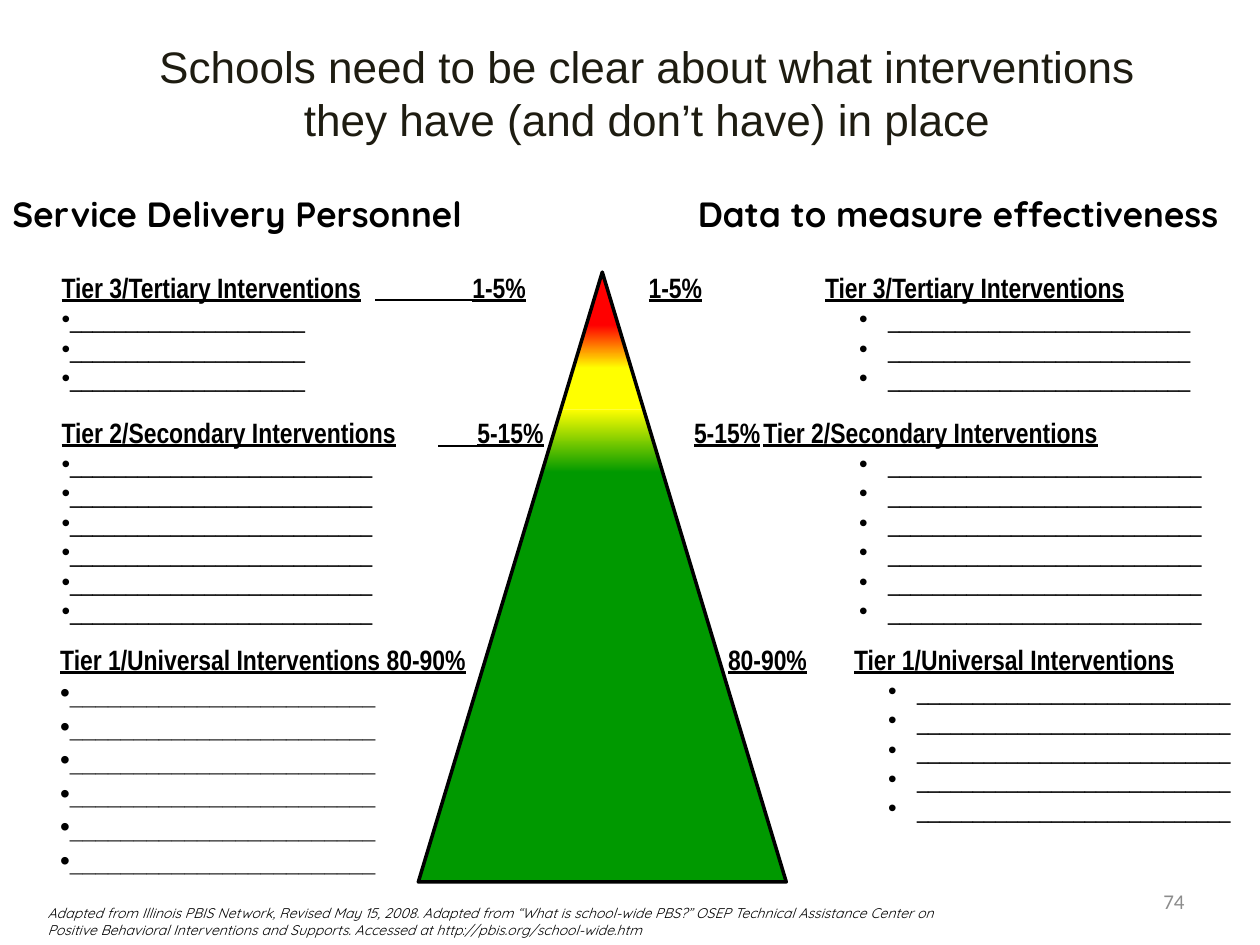
"""Build the tiered interventions slide with its pyramid and fill-in lists."""
import lxml.etree
import pptx
import pptx.dml.color
import pptx.enum.shapes
import pptx.enum.text
import pptx.oxml.ns
import pptx.util

Inches = pptx.util.Inches
qn = pptx.oxml.ns.qn
Align = pptx.enum.text.PP_ALIGN


class Theme:
    black, title, number = "000000", "1E1C11", "8C8C8C"
    red, yellow, green = "FF0000", "FFFF00", "009900"
    title_size, heading_size, tier_size = 25.2, 20, 16
    blank_size, number_size, credit_size = 14, 12, 8
    title_font, tier_font = "Arial", "Arial Narrow"
    display_font, number_font = "Quicksand", "Calibri"


def add_box(page, left, top, width, height):
    box = page.shapes.add_textbox(Inches(left), Inches(top), Inches(width), Inches(height))
    box.text_frame.word_wrap = True
    box.text_frame.auto_size = pptx.enum.text.MSO_AUTO_SIZE.SHAPE_TO_FIT_TEXT
    return box


def add_span(para, text, font, size, color=Theme.black, bold=False, italic=False, underline=False):
    span = para.add_run()
    span.text = text
    span.font.name = font
    span.font.size = pptx.util.Pt(size)
    span.font.color.rgb = pptx.dml.color.RGBColor.from_string(color)
    span.font.bold = bold
    span.font.italic = italic
    span.font.underline = underline


deck = pptx.Presentation()
deck.slide_width, deck.slide_height = Inches(10), Inches(7.5)
page = deck.slides.add_slide(deck.slide_layouts[5])

title = page.shapes.title
title.left, title.top, title.width, title.height = Inches(0.8), Inches(0.23), Inches(8.67), Inches(1)
title.text_frame.auto_size = pptx.enum.text.MSO_AUTO_SIZE.NONE
title.text_frame.vertical_anchor = pptx.enum.text.MSO_ANCHOR.MIDDLE
para = title.text_frame.paragraphs[0]
para.alignment = Align.CENTER
add_span(para, "Schools need to be clear about what interventions they have (and don’t have) in place",
         Theme.title_font, Theme.title_size, Theme.title)

tiers = [
    ((0.39, 2.1, 4.75, 1.11), "Tier 3/Tertiary Interventions\t1-5%", [3.26], 3, 21, Theme.blank_size, 0),
    ((4.95, 2.1, 4.76, 1.08), "\t1-5%\tTier 3/Tertiary Interventions", [0.1, 1.5], 3, 27, Theme.blank_size, 2),
    ((0.39, 3.25, 4.08, 1.78), "Tier 2/Secondary Interventions\t5-15%", [3.3], 6, 27, Theme.blank_size, 0),
    ((4.95, 3.25, 5.01, 2.05), "\t5-15%\tTier 2/Secondary Interventions", [0.46, 1.01], 6, 28, Theme.blank_size, 2),
    ((0.38, 5.05, 3.87, 1.99), "Tier 1/Universal Interventions 80-90%", [], 6, 24, Theme.tier_size, 0),
    ((5.18, 5.05, 4.76, 1.55), "\t80-90%\tTier 1/Universal Interventions", [0.5, 1.5], 5, 28, Theme.blank_size, 2),
]
for place, heading, stops, count, length, size, indent in tiers:
    frame = add_box(page, *place).text_frame
    para = frame.paragraphs[0]
    if stops:
        tabs = lxml.etree.SubElement(para._p.get_or_add_pPr(), qn("a:tabLst"))
        for stop in stops:
            lxml.etree.SubElement(tabs, qn("a:tab"), pos=str(Inches(stop)), algn="l")
    add_span(para, heading, Theme.tier_font, Theme.tier_size, bold=True, underline=True)
    for _ in range(count):
        para = frame.add_paragraph()
        settings = para._p.get_or_add_pPr()
        settings.set("marL", str(Inches(indent)))
        settings.set("indent", str(Inches(-0.23 if indent else 0)))
        if indent:
            para.level = 4
        lxml.etree.SubElement(settings, qn("a:buFont"), typeface="Arial")
        lxml.etree.SubElement(settings, qn("a:buChar"), char="•")
        add_span(para, "_" * length, Theme.tier_font, size, bold=size == Theme.tier_size)

for start, end, height in [(2.98, 3.75, 2.38), (3.48, 3.79, 3.54)]:
    rule = page.shapes.add_connector(pptx.enum.shapes.MSO_CONNECTOR.STRAIGHT,
                                     Inches(start), Inches(height), Inches(end), Inches(height))
    rule.line.color.rgb = pptx.dml.color.RGBColor.from_string(Theme.black)
    rule.line.width = pptx.util.Pt(1.25)
    lxml.etree.SubElement(rule._element.spPr, qn("a:effectLst"))

for place, heading, align in [
    ((0, 1.48, 4.08, 0.44), "Service Delivery Personnel", Align.LEFT),
    ((5.33, 1.48, 4.44, 0.43), "Data to measure effectiveness", Align.RIGHT),
]:
    para = add_box(page, *place).text_frame.paragraphs[0]
    para.alignment = align
    add_span(para, heading, Theme.display_font, Theme.heading_size, bold=True)

pyramid = page.shapes.add_group_shape()
center, apex, base, half_base = 4.78, 2.16, 7, 1.46
bands = [
    (apex, 2.59, Theme.red, Theme.red),
    (3.67, base, Theme.green, Theme.green),
    (3.25, 3.75, Theme.yellow, Theme.green),
    (2.92, 3.25, Theme.yellow, Theme.yellow),
    (2.58, 2.92, Theme.red, Theme.yellow),
]
for top, bottom, top_color, bottom_color in bands:
    upper, lower = [half_base * (edge - apex) / (base - apex) for edge in (top, bottom)]
    outline = pyramid.shapes.build_freeform(Inches(center - lower), Inches(bottom))
    outline.add_line_segments([
        (Inches(center - upper), Inches(top)),
        (Inches(center + upper), Inches(top)),
        (Inches(center + lower), Inches(bottom)),
    ], close=True)
    band = outline.convert_to_shape()
    band.shadow.inherit = False
    band.line.fill.background()
    if top_color == bottom_color:
        band.fill.solid()
        band.fill.fore_color.rgb = pptx.dml.color.RGBColor.from_string(top_color)
    else:
        band.fill.gradient()
        band.fill.gradient_angle = 270
        for stop, color in zip(band.fill.gradient_stops, (top_color, bottom_color)):
            stop.color.rgb = pptx.dml.color.RGBColor.from_string(color)

border = pyramid.shapes.add_shape(pptx.enum.shapes.MSO_SHAPE.ISOSCELES_TRIANGLE,
                                  Inches(center - half_base), Inches(apex),
                                  Inches(2 * half_base), Inches(base - apex))
border.shadow.inherit = False
border.fill.background()
border.line.color.rgb = pptx.dml.color.RGBColor.from_string(Theme.black)
border.line.width = pptx.util.Pt(2)

credit = add_box(page, 0.28, 7.13, 7.6, 0.37)
add_span(credit.text_frame.paragraphs[0],
         "Adapted from Illinois PBIS Network, Revised May 15, 2008. Adapted from “What is school-wide PBS?” "
         "OSEP Technical Assistance Center on Positive Behavioral Interventions and Supports. "
         "Accessed at http://pbis.org/school-wide.htm",
         Theme.display_font, Theme.credit_size, italic=True)

number = add_box(page, 7.17, 6.95, 2.33, 0.4)
number.text_frame.auto_size = pptx.enum.text.MSO_AUTO_SIZE.NONE
number.text_frame.vertical_anchor = pptx.enum.text.MSO_ANCHOR.MIDDLE
para = number.text_frame.paragraphs[0]
para.alignment = Align.RIGHT
add_span(para, "74", Theme.number_font, Theme.number_size, Theme.number)

deck.save("out.pptx")
